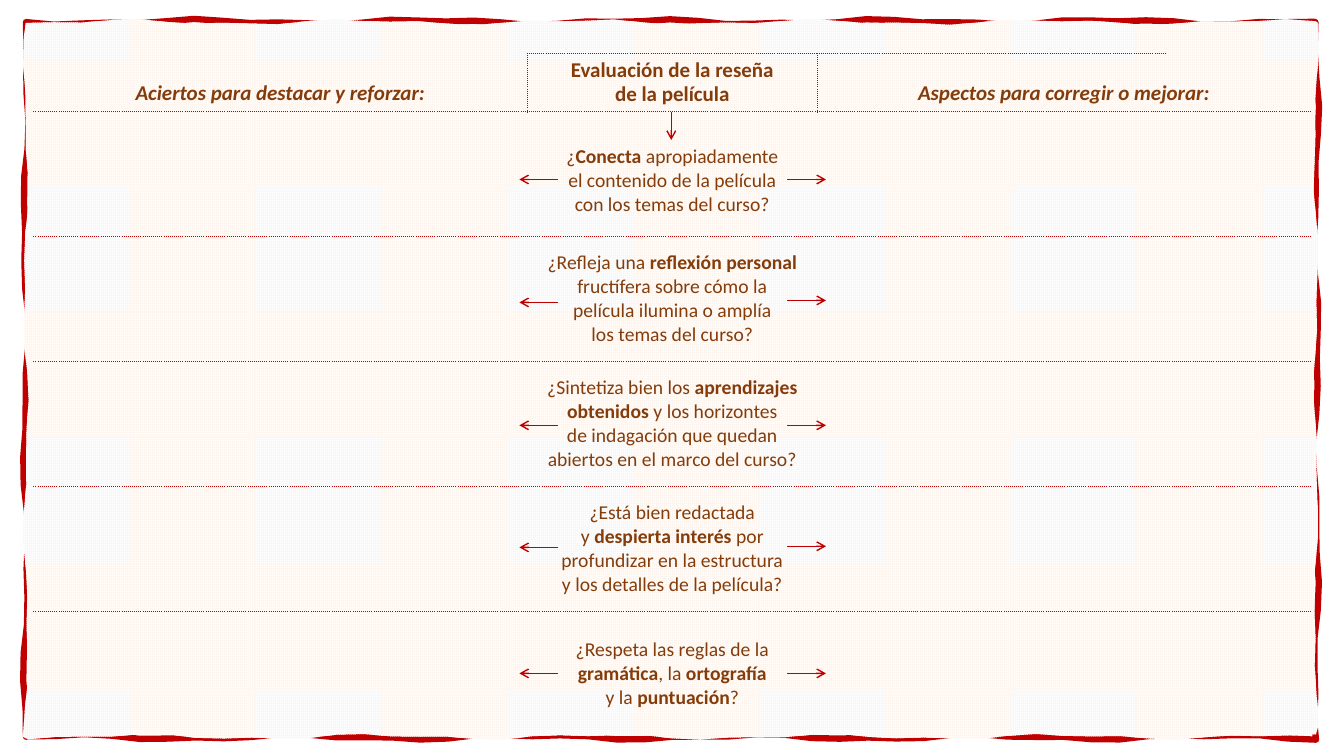
from itertools import product
from math import sin

from lxml.etree import SubElement
from pptx import Presentation
from pptx.dml.color import RGBColor
from pptx.enum.dml import MSO_PATTERN
from pptx.enum.shapes import MSO_CONNECTOR
from pptx.enum.text import MSO_ANCHOR, PP_ALIGN
from pptx.oxml.ns import qn
from pptx.util import Pt

RED = RGBColor(0xC0, 0x00, 0x00)
BROWN = RGBColor(0x84, 0x3C, 0x0B)
CREAM = RGBColor(0xFE, 0xF6, 0xF0)
WHITE = RGBColor(0xFF, 0xFF, 0xFF)
FONT = "Calibri"
NO_STYLE_NO_GRID = "{2D5ABB26-0587-4C30-8999-92F81FD0307C}"

COLUMN_WIDTHS = [352.8, 83.5, 123.8, 249.8, 102.3]
SPACER_HEIGHT, HEADING_HEIGHT, QUESTION_HEIGHT = 17.3, 41, 89.3
TITLE = "Evaluación de la reseña\nde la película"
STRENGTHS = "Aciertos para destacar y reforzar:"
WEAKNESSES = "Aspectos para corregir o mejorar:"
# Asterisks enclose bold words.
QUESTIONS = [
    "¿*Conecta* apropiadamente\nel contenido de la película\ncon los temas del curso?",
    "¿Refleja una *reflexión personal *fructífera sobre cómo la\n"
    "película ilumina o amplía\nlos temas del curso?",
    "¿Sintetiza bien los *aprendizajes obtenidos* y los horizontes\n"
    "de indagación que quedan\nabiertos en el marco del curso?",
    "¿Está bien redactada\ny *despierta interés *por\n"
    "profundizar en la estructura\ny los detalles de la película?",
    "¿Respeta las reglas de la *gramática*, la *ortografía\n*y la *puntuación*?",
]
# Heights of the left and right arrow beside each question.
ARROW_HEIGHTS = [(128.2, 128.2), (216, 214.6), (303.8, 303.8), (391, 390.2), (481, 481)]


def wavy_outline(slide, left, top, width, height, phase):
    """Draw a closed rectangle whose sides waver like a brush stroke."""
    step = 20

    def wave(distance):
        return 1.4 * sin(distance / 26 + phase) + 0.9 * sin(distance / 11 + 2 * phase)

    across, down = range(0, int(width), step), range(0, int(height), step)
    points = [(left + x, top + wave(x)) for x in across]
    points += [(left + width + wave(y + 300), top + y) for y in down]
    points += [(left + width - x, top + height + wave(x + 700)) for x in across]
    points += [(left + wave(y + 900), top + height - y) for y in down]
    builder = slide.shapes.build_freeform(Pt(points[0][0]), Pt(points[0][1]))
    builder.add_line_segments([(Pt(x), Pt(y)) for x, y in points[1:]], close=True)
    shape = builder.convert_to_shape()
    shape.shadow.inherit = False
    return shape


def add_paper(slide, left, top, width, height):
    border = wavy_outline(slide, left, top, width, height, phase=0)
    border.fill.background()
    border.line.color.rgb = RED
    border.line.width = Pt(4.5)
    sheet = wavy_outline(slide, left, top, width, height, phase=2)
    sheet.fill.patterned()
    sheet.fill.pattern = MSO_PATTERN.SMALL_GRID
    sheet.fill.fore_color.rgb = CREAM
    sheet.fill.back_color.rgb = WHITE
    sheet.line.fill.background()


def set_borders(cell, sides):
    """Dot the given sides, named by the letters L, R, T and B in that order."""
    properties = cell._tc.get_or_add_tcPr()
    for position, side in enumerate(sides):
        line = SubElement(properties, qn(f"a:ln{side}"), w=str(Pt(1)))
        fill = SubElement(line, qn("a:solidFill"))
        SubElement(fill, qn("a:srgbClr"), val=str(RED))
        SubElement(line, qn("a:prstDash"), val="sysDot")
        properties.insert(position, line)


def write_cell(cell, text, size, bold=False, italic=False, anchor=MSO_ANCHOR.MIDDLE):
    cell.vertical_anchor = anchor
    paragraph = cell.text_frame.paragraphs[0]
    paragraph.alignment = PP_ALIGN.CENTER
    for index, part in enumerate(text.split("*")):
        for line_index, line in enumerate(part.split("\n")):
            if line_index:
                paragraph.add_line_break()
            if line:
                run = paragraph.add_run()
                run.text = line
                run.font.bold = bold or index % 2 == 1
    font = paragraph.font
    font.name, font.size, font.italic = FONT, Pt(size), italic
    font.color.rgb = BROWN
    return paragraph


def add_rubric(slide, left, top):
    heights = [SPACER_HEIGHT, HEADING_HEIGHT] + [QUESTION_HEIGHT] * len(QUESTIONS)
    frame = slide.shapes.add_table(
        len(heights), len(COLUMN_WIDTHS), Pt(left), Pt(top),
        Pt(sum(COLUMN_WIDTHS)), Pt(sum(heights)))
    table = frame.table
    table.first_row = table.horz_banding = False
    table._tbl.tblPr.find(qn("a:tableStyleId")).text = NO_STYLE_NO_GRID
    for column, width in zip(table.columns, COLUMN_WIDTHS):
        column.width = Pt(width)
    for row, height in zip(table.rows, heights):
        row.height = Pt(height)

    last = len(heights) - 1
    for row, column in product(range(len(heights)), range(len(COLUMN_WIDTHS))):
        cell = table.cell(row, column)
        cell.fill.background()
        if row == 0:
            cell.margin_top = cell.margin_bottom = 0
            cell.text_frame.paragraphs[0].font.size = Pt(8)
        elif row == 1:
            set_borders(cell, ["RB", "LRT", "RT", "LB", "B"][column])
        elif row < last:
            set_borders(cell, "B")
    for row in range(len(heights)):
        for column in (0, 2) if row == 0 else (1, 3):
            table.cell(row, column).merge(table.cell(row, column + 1))

    write_cell(table.cell(1, 0), STRENGTHS, 15, True, True, MSO_ANCHOR.BOTTOM)
    write_cell(table.cell(1, 1), TITLE, 15, True, anchor=MSO_ANCHOR.TOP).line_spacing = 0.93
    write_cell(table.cell(1, 3), WEAKNESSES, 15, True, True, MSO_ANCHOR.BOTTOM)
    for row, question in enumerate(QUESTIONS, start=2):
        write_cell(table.cell(row, 1), question, 14)
    table.cell(2, 1).margin_top = Pt(13.4)


def add_arrow(slide, start, end):
    arrow = slide.shapes.add_connector(
        MSO_CONNECTOR.STRAIGHT, *(Pt(value) for value in (*start, *end)))
    arrow.line.color.rgb = RED
    arrow.line.width = Pt(1)
    SubElement(arrow.line._get_or_add_ln(), qn("a:tailEnd"), type="arrow")
    SubElement(arrow._element.spPr, qn("a:effectLst"))


def add_arrows(slide, left, right, length):
    """Point outwards from both sides of each question, and down from the title."""
    add_arrow(slide, (479.5, 80), (479.5, 100))
    for left_height, right_height in ARROW_HEIGHTS:
        add_arrow(slide, (right - length, right_height), (right, right_height))
        add_arrow(slide, (left + length, left_height), (left, left_height))


def main():
    presentation = Presentation()
    presentation.slide_width, presentation.slide_height = Pt(960), Pt(540)
    slide = presentation.slides.add_slide(presentation.slide_layouts[6])
    add_paper(slide, left=18.5, top=15.8, width=921.5, height=510.5)
    add_rubric(slide, left=23.8, top=20.9)
    add_arrows(slide, left=371, right=590, length=27.6)
    presentation.save("out.pptx")


if __name__ == "__main__":
    main()
